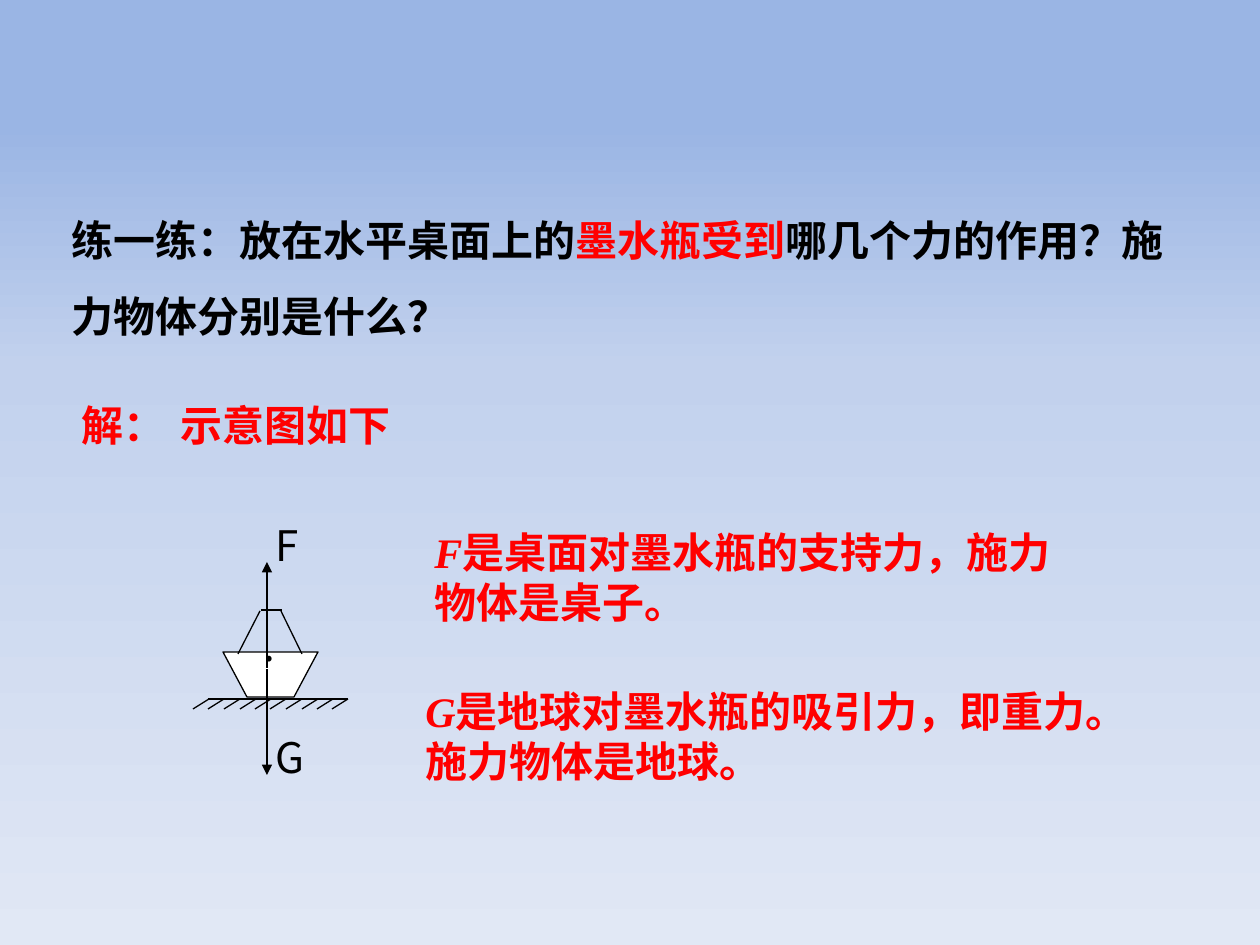
from copy import deepcopy
from dataclasses import dataclass

from pptx import Presentation
from pptx.dml.color import RGBColor
from pptx.enum.shapes import MSO_CONNECTOR
from pptx.enum.text import MSO_ANCHOR, MSO_AUTO_SIZE, PP_ALIGN
from pptx.oxml.ns import qn
from pptx.util import Pt

SCALE = 914400 / 126
BLACK, RED, WHITE = "000000", "FF0000", "FFFFFF"
SANS, SERIF, HAN = "Arial", "Times New Roman", "Noto Sans CJK SC"
BOLD = {"name": SANS, "size": Pt(24), "bold": True}
SLANT = {**BOLD, "name": SERIF, "italic": True}
PLAIN = {"name": HAN, "size": Pt(24), "bold": False}


@dataclass
class Piece:
    text: str
    color: str
    form: dict


@dataclass
class Note:
    box: tuple[int, int, int, int]
    runs: list[Piece]
    form: dict


@dataclass
class Line:
    start: tuple[int, int]
    end: tuple[int, int]
    arrow: bool = False


def px(num: float) -> int:
    return round(num * SCALE)


def paint(code: str) -> RGBColor:
    return RGBColor.from_string(code)


def apply(item, form: dict) -> None:
    for key, value in form.items():
        setattr(item, key, value)


def fill_back(slide, stops: list[tuple[int, str]]) -> None:
    fill = slide.background.fill
    fill.gradient()
    fill.gradient_angle = 270
    first = fill._fill._gradFill.find(qn("a:gsLst"))[0]
    first.addnext(deepcopy(first))
    for stop, (place, code) in zip(fill.gradient_stops, stops):
        stop.color.rgb = paint(code)
        stop.position = place / 100


def write(shape, note: Note) -> None:
    left, top, width, height = map(px, note.box)
    apply(shape, {"left": left, "top": top, "width": width, "height": height})
    frame = shape.text_frame
    apply(frame, {"word_wrap": True, "auto_size": MSO_AUTO_SIZE.NONE,
                  "vertical_anchor": MSO_ANCHOR.TOP, **note.form})
    para = frame.paragraphs[0]
    para.alignment = PP_ALIGN.LEFT
    for piece in note.runs:
        run = para.add_run()
        run.text = piece.text
        apply(run.font, piece.form)
        run.font.color.rgb = paint(piece.color)


def add_note(slide, note: Note) -> None:
    write(slide.shapes.add_textbox(0, 0, 0, 0), note)


def add_line(slide, line: Line) -> None:
    shape = slide.shapes.add_connector(
        MSO_CONNECTOR.STRAIGHT, *map(px, line.start + line.end))
    shape.line.width = Pt(0.75)
    shape.line.color.rgb = paint(BLACK)
    props = shape._element.spPr
    props.append(props.makeelement(qn("a:effectLst"), {}))
    if line.arrow:
        edge = props.find(qn("a:ln"))
        edge.append(edge.makeelement(qn("a:tailEnd"), {"type": "triangle"}))


def add_jar(slide) -> None:
    shape = slide.shapes.build_freeform(223, 652, scale=SCALE)
    shape.add_line_segments([(247, 697), (294, 697), (318, 652)], close=True)
    jar = shape.convert_to_shape()
    jar.shadow.inherit = False
    jar.fill.solid()
    jar.fill.fore_color.rgb = paint(WHITE)
    jar.line.width = Pt(0.75)
    jar.line.color.rgb = paint(BLACK)


def main() -> None:
    deck = Presentation()
    apply(deck, {"slide_width": px(1260), "slide_height": px(945)})
    slide = deck.slides.add_slide(deck.slide_layouts[5])
    fill_back(slide, [(13, "9AB5E4"), (39, "C2D1ED"), (100, "E1E8F5")])

    title = slide.shapes.title
    write(title, Note((59, 183, 1144, 154), [
        Piece("练一练：放在水平桌面上的", BLACK, BOLD),
        Piece("墨水瓶受到", RED, BOLD),
        Piece("哪几个力的作用？施力物体分别是什么？", BLACK, BOLD)], {}))
    title.text_frame.paragraphs[0].line_spacing = 1.5

    ticks = [round(209 + 15.5 * step) for step in range(10)]
    table = [Line((x, 699), (x - 16, 709)) for x in ticks]
    table.append(Line((208, 699), (348, 699)))
    for line in table:
        add_line(slide, line)

    add_jar(slide)
    neck = [Line((260, 611), (238, 654)), Line((281, 611), (302, 654)),
            Line((261, 610), (282, 610))]
    force = [Line((267, 669), (267, 775), True),
             Line((267, 668), (267, 562), True)]
    for line in neck + force:
        add_line(slide, line)

    flush = {"margin_top": 0}
    notes = [
        Note((69, 393, 170, 63), [Piece("解：", RED, BOLD)], {}),
        Note((168, 393, 315, 64), [Piece("示意图如下", RED, BOLD)], {}),
        Note((251, 620, 84, 64), [Piece(".", BLACK, PLAIN)], flush),
        Note((263, 732, 73, 63), [Piece("G", BLACK, PLAIN)], flush),
        Note((263, 520, 63, 63), [Piece("F", BLACK, PLAIN)], flush),
        Note((422, 520, 651, 115), [
            Piece("F", RED, SLANT),
            Piece("是桌面对墨水瓶的支持力，施力物体是桌子。", RED, BOLD)], {}),
        Note((413, 679, 714, 115), [
            Piece("G", RED, SLANT),
            Piece("是地球对墨水瓶的吸引力，即重力。施力物体是地球。", RED, BOLD)], {}),
    ]
    for note in notes:
        add_note(slide, note)

    deck.save("out.pptx")


if __name__ == "__main__":
    main()
